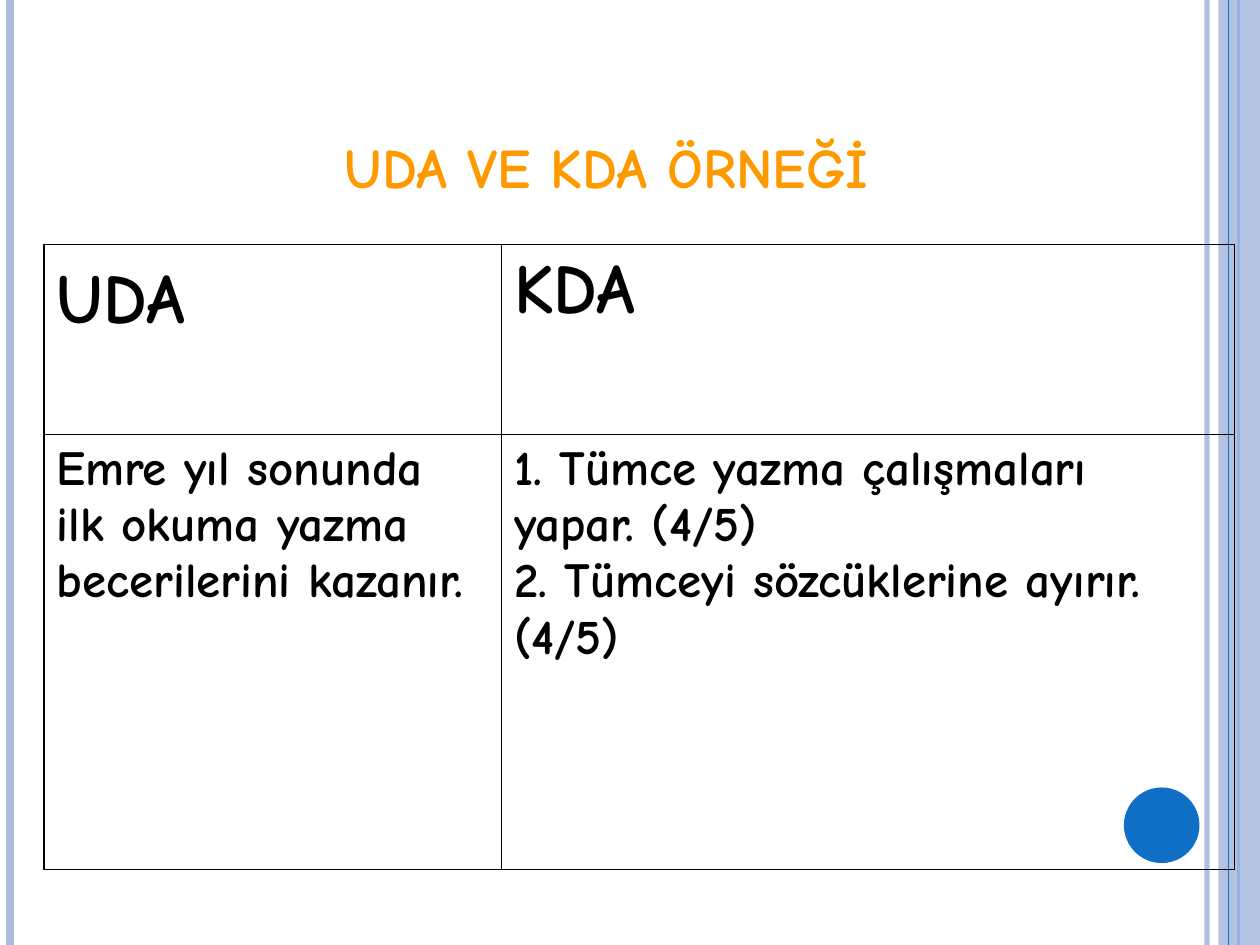
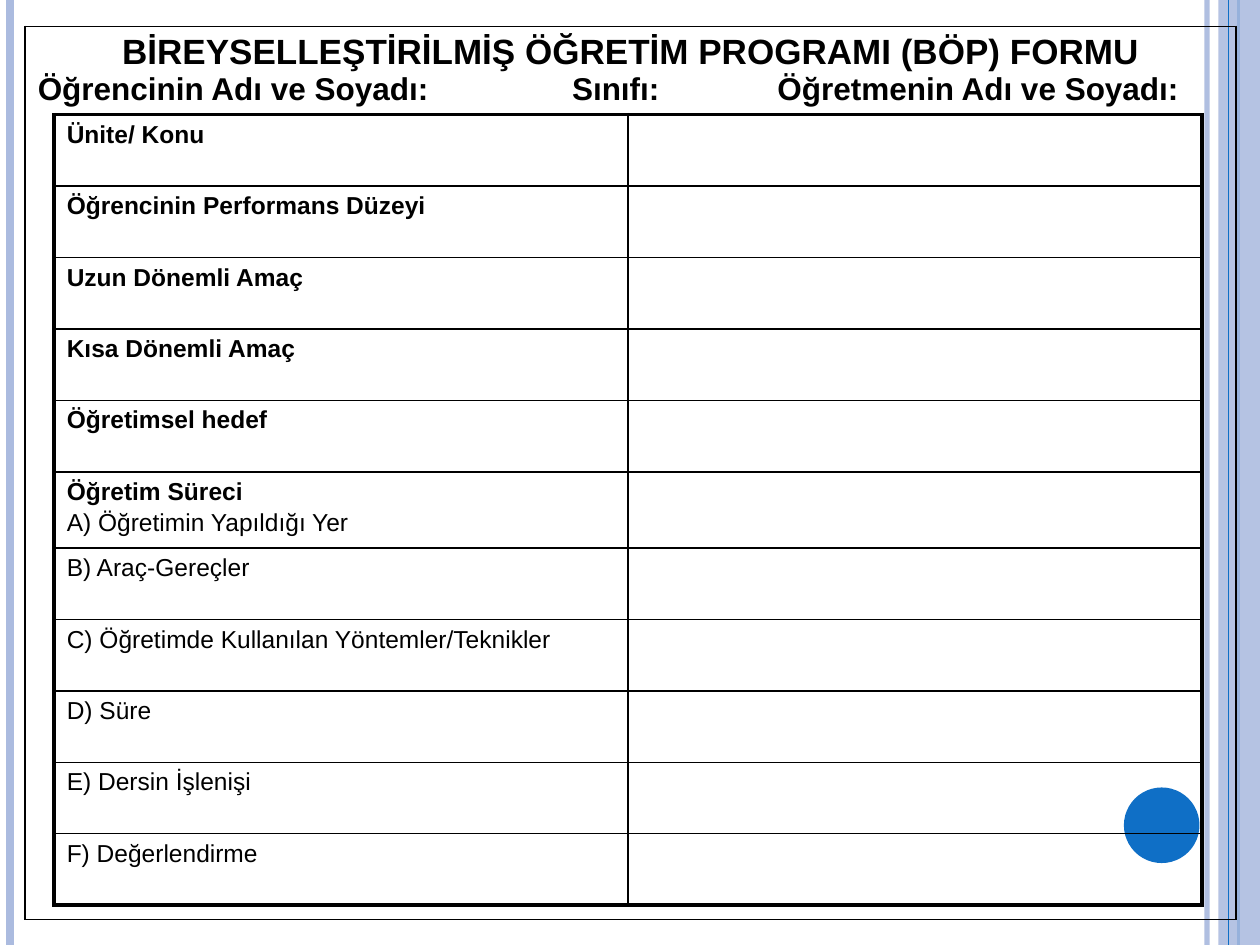
from dataclasses import dataclass

from lxml import etree
from pptx import Presentation
from pptx.dml.color import RGBColor
from pptx.enum.shapes import MSO_CONNECTOR, MSO_SHAPE
from pptx.enum.text import MSO_ANCHOR, PP_ALIGN
from pptx.oxml.ns import qn
from pptx.util import Inches, Pt

STRAIGHT = MSO_CONNECTOR.STRAIGHT
RECTANGLE, OVAL = MSO_SHAPE.RECTANGLE, MSO_SHAPE.OVAL
LEFT, CENTER, JUSTIFY = PP_ALIGN.LEFT, PP_ALIGN.CENTER, PP_ALIGN.JUSTIFY
MIDDLE = MSO_ANCHOR.MIDDLE
TITLE_ONLY, BLANK = 5, 6

# The slide is a grid of 100 columns by 75 rows of equal units
COLUMNS, ROWS = 100, 75
UNIT = Inches(10) // COLUMNS


@dataclass(frozen=True)
class Theme:
    pale: RGBColor = RGBColor(0xAB, 0xBB, 0xDF)
    blue: RGBColor = RGBColor(0x0F, 0x6F, 0xC6)
    orange: RGBColor = RGBColor(0xFF, 0x99, 0x00)
    black: RGBColor = RGBColor(0, 0, 0)
    hand_font: str = "Comic Neue"
    form_font: str = "Arial"
    title_size: int = 32
    goal_heading_size: int = 40
    goal_size: int = 28
    form_title_size: int = 20
    form_names_size: int = 18
    form_size: int = 14
    thin: float = 1
    thick: float = 2.25


THEME = Theme()


@dataclass(frozen=True)
class Box:
    """An area in grid units."""
    left: float
    top: float
    width: float
    height: float

    def inside(self, left, top, width, height):
        return Box(self.left + left, self.top + top, width, height)

    def emu(self):
        return [round(length * UNIT) for length in
                (self.left, self.top, self.width, self.height)]


PAGE = Box(0, 0, COLUMNS, ROWS)

GOALS = [
    (["UDA"], ["KDA"]),
    (["Emre yıl sonunda", "ilk okuma yazma", "becerilerini kazanır."],
     ["1. Tümce yazma çalışmaları yapar. (4/5)",
      "2. Tümceyi sözcüklerine ayırır. (4/5)"]),
]
FORM_TITLE = "BİREYSELLEŞTİRİLMİŞ ÖĞRETİM PROGRAMI (BÖP) FORMU"
FORM_NAMES = ["Öğrencinin Adı ve Soyadı:", "Sınıfı:", "Öğretmenin Adı ve Soyadı:"]
NAME_TABS = (42.4, 58.7)
# Each form row: bold lines, then plain lines
FORM_ROWS = [
    (["Ünite/ Konu"], []),
    (["Öğrencinin Performans Düzeyi"], []),
    (["Uzun Dönemli Amaç"], []),
    (["Kısa Dönemli Amaç"], []),
    (["Öğretimsel hedef"], []),
    (["Öğretim Süreci"], ["A) Öğretimin Yapıldığı Yer"]),
    ([], ["B) Araç-Gereçler"]),
    ([], ["C) Öğretimde Kullanılan Yöntemler/Teknikler"]),
    ([], ["D) Süre"]),
    ([], ["E) Dersin İşlenişi"]),
    ([], ["F) Değerlendirme"]),
]


# Shared helpers
def set_alpha(properties, percent):
    color = next(properties.iter(qn("a:srgbClr")))
    etree.SubElement(color, qn("a:alpha"), val=str(percent * 1000))


def style_paragraph(paragraph, font, size, bold=True, color=THEME.black, align=LEFT):
    paragraph.alignment = align
    paragraph.font.name = font
    paragraph.font.size = Pt(size)
    paragraph.font.bold = bold
    paragraph.font.color.rgb = color


def write_lines(cell, lines, font, size, bold=True, align=LEFT):
    cell.text = "\n".join(lines)
    for paragraph in cell.text_frame.paragraphs:
        style_paragraph(paragraph, font, size, bold, align=align)


def set_borders(cell, widths):
    """Draw the cell's left, right, top and bottom borders."""
    properties = cell._tc.get_or_add_tcPr()
    for position, (side, width) in enumerate(zip("LRTB", widths)):
        line = etree.Element(qn(f"a:ln{side}"), w=str(Pt(width)))
        fill = etree.SubElement(line, qn("a:solidFill"))
        etree.SubElement(fill, qn("a:srgbClr"), val=str(THEME.black))
        properties.insert(position, line)


def add_grid(slide, box, widths, heights, outer=THEME.thin):
    """Add an unfilled table with thin inner lines and the given outline."""
    frame = slide.shapes.add_table(len(heights), len(widths), *box.emu())
    table = frame.table
    table.first_row = table.horz_banding = False
    for column, width in zip(table.columns, widths):
        column.width = round(width * UNIT)
    for row, height in zip(table.rows, heights):
        row.height = round(height * UNIT)
    last_row, last_column = len(heights) - 1, len(widths) - 1
    for r, row in enumerate(table.rows):
        for c, cell in enumerate(row.cells):
            cell.fill.background()
            edges = (c == 0, c == last_column, r == 0, r == last_row)
            set_borders(cell, [outer if edge else THEME.thin for edge in edges])
    return table


# Side bands and dot, the same on every slide
def add_rule(slide, box, column, color, width, alpha=None):
    left, top, _, height = box.inside(column, 0, 0, box.height).emu()
    rule = slide.shapes.add_connector(STRAIGHT, left, top, left, top + height)
    rule.line.color.rgb = color
    rule.line.width = Pt(width)
    if alpha:
        set_alpha(rule.line._ln, alpha)
    etree.SubElement(rule._element.spPr, qn("a:effectLst"))


def add_filled(slide, box, kind, color):
    shape = slide.shapes.add_shape(kind, *box.emu())
    shape.shadow.inherit = False
    shape.fill.solid()
    shape.fill.fore_color.rgb = color
    shape.line.fill.background()
    return shape


def add_side_bands(slide, box):
    add_rule(slide, box, 95.8, THEME.pale, 3, alpha=93)
    add_rule(slide, box, 0.8, THEME.pale, 4.5)
    add_rule(slide, box, 98.3, THEME.blue, 1.5)
    band = add_filled(slide, box.inside(96.7, 0, 3.3, box.height), RECTANGLE, THEME.pale)
    set_alpha(band._element.spPr, 87)
    add_rule(slide, box, 97.5, THEME.blue, 0.75)
    add_filled(slide, box.inside(89.2, 62.5, 6, 6), OVAL, THEME.blue)


def add_page(presentation, layout):
    slide = presentation.slides.add_slide(presentation.slide_layouts[layout])
    add_side_bands(slide, PAGE)
    return slide


# Slide with the long-term and short-term goals
def place_title(slide, box, text):
    title = slide.shapes.title
    title.left, title.top, title.width, title.height = box.emu()
    frame = title.text_frame
    frame.text = text
    frame.word_wrap = True
    frame.vertical_anchor = MIDDLE
    frame.margin_bottom = Inches(0.73)
    style_paragraph(frame.paragraphs[0], THEME.hand_font, THEME.title_size,
                    color=THEME.orange, align=CENTER)


def place_goals(slide, box):
    table = add_grid(slide, box, (36.3, 58.2), (15.1, 34.5))
    sizes = (THEME.goal_heading_size, THEME.goal_size)
    for row, texts, size, align in zip(table.rows, GOALS, sizes, (JUSTIFY, LEFT)):
        for cell, lines in zip(row.cells, texts):
            write_lines(cell, lines, THEME.hand_font, size, align=align)
    table.cell(0, 0).margin_top = Inches(0.13)


def build_goals_slide(presentation):
    slide = add_page(presentation, TITLE_ONLY)
    place_title(slide, PAGE.inside(25, 7, 46.3, 19.2), "UDA VE KDA ÖRNEĞİ")
    place_goals(slide, PAGE.inside(3.5, 19.4, 94.5, 49.6))


# Slide with the programme form
def place_form_frame(slide, box):
    cell = add_grid(slide, box, [box.width], [box.height]).cell(0, 0)
    write_lines(cell, [FORM_TITLE, "\t".join(FORM_NAMES)],
                THEME.form_font, THEME.form_title_size)
    heading, names = cell.text_frame.paragraphs
    heading.alignment = CENTER
    names.font.size = Pt(THEME.form_names_size)
    properties = names._p.get_or_add_pPr()
    tabs = etree.Element(qn("a:tabLst"))
    for stop in NAME_TABS:
        etree.SubElement(tabs, qn("a:tab"), pos=str(round(stop * UNIT)), algn="l")
    properties.find(qn("a:defRPr")).addprevious(tabs)


def place_form_rows(slide, box):
    # The row with two lines of text is a little taller
    heights = [6.05 if bold and plain else 5.67 for bold, plain in FORM_ROWS]
    table = add_grid(slide, box, [box.width / 2] * 2, heights, THEME.thick)
    for row, (bold, plain) in zip(table.rows, FORM_ROWS):
        cell = row.cells[0]
        write_lines(cell, bold + plain, THEME.form_font, THEME.form_size)
        for index, paragraph in enumerate(cell.text_frame.paragraphs):
            paragraph.space_before = Pt(2)
            paragraph.font.bold = index < len(bold)


def build_form_slide(presentation):
    slide = add_page(presentation, BLANK)
    frame = PAGE.inside(2, 2.1, 96.1, 70.9)
    place_form_frame(slide, frame)
    place_form_rows(slide, frame.inside(2.3, 7, 91.1, 62.8))


def main():
    presentation = Presentation()
    presentation.slide_width = COLUMNS * UNIT
    presentation.slide_height = ROWS * UNIT
    build_goals_slide(presentation)
    build_form_slide(presentation)
    presentation.save("out.pptx")


if __name__ == "__main__":
    main()
